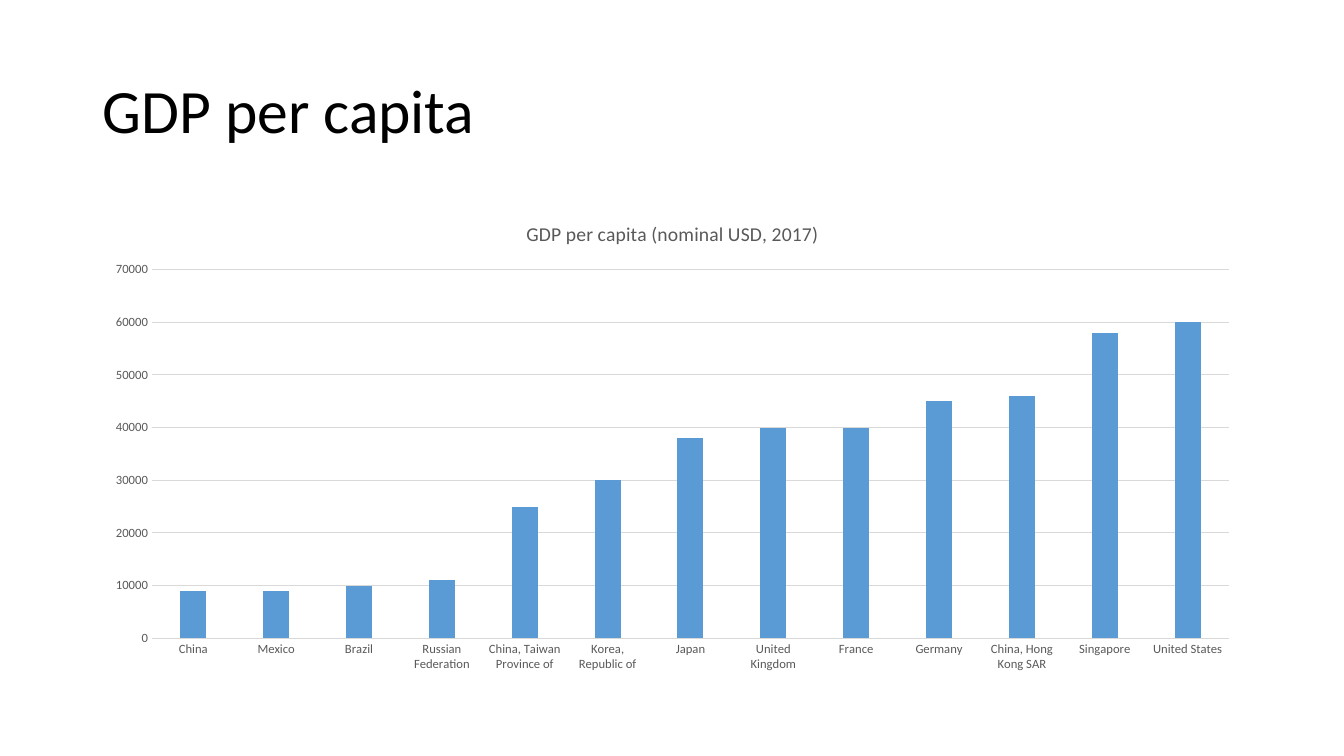
from pptx import Presentation
from pptx.chart.data import CategoryChartData
from pptx.dml.color import RGBColor
from pptx.enum.chart import XL_CHART_TYPE as ChartType, XL_TICK_MARK as TickMark
from pptx.enum.text import MSO_ANCHOR
from pptx.util import Inches, Pt

FONT = "Calibri"
BLACK = RGBColor(0x00, 0x00, 0x00)
GRAY = RGBColor(0x59, 0x59, 0x59)
LIGHT_GRAY = RGBColor(0xD9, 0xD9, 0xD9)
BLUE = RGBColor(0x5B, 0x9B, 0xD5)

GDP_PER_CAPITA = {
    "China": 9000,
    "Mexico": 9000,
    "Brazil": 10000,
    "Russian Federation": 11000,
    "China, Taiwan Province of": 25000,
    "Korea, Republic of": 30000,
    "Japan": 38000,
    "United Kingdom": 40000,
    "France": 40000,
    "Germany": 45000,
    "China, Hong Kong SAR": 46000,
    "Singapore": 58000,
    "United States": 60000,
}


def set_font(font, size, color):
    font.name = FONT
    font.size = Pt(size)
    font.bold = False
    font.color.rgb = color


prs = Presentation()
prs.slide_width = Inches(13.33)
prs.slide_height = Inches(7.5)
s = prs.slides.add_slide(prs.slide_layouts[6])

# Title
tf = s.shapes.add_textbox(Inches(0.92), Inches(0.4), Inches(11.5), Inches(1.45)).text_frame
tf.word_wrap = True
tf.vertical_anchor = MSO_ANCHOR.MIDDLE
tf.text = "GDP per capita"
p = tf.paragraphs[0]
p.line_spacing = 0.9
set_font(p.runs[0].font, 44, BLACK)

# Column chart
data = CategoryChartData()
data.categories = list(GDP_PER_CAPITA)
data.add_series("Series 1", list(GDP_PER_CAPITA.values()))
chart = s.shapes.add_chart(ChartType.COLUMN_CLUSTERED, Inches(0.92), Inches(2),
                           Inches(11.5), Inches(4.76), data).chart
set_font(chart.font, 10, BLACK)
chart.has_legend = False

chart.has_title = True
chart.chart_title.include_in_layout = False
tf = chart.chart_title.text_frame
tf.text = "GDP per capita (nominal USD, 2017)"
set_font(tf.paragraphs[0].runs[0].font, 14, GRAY)

plot = chart.plots[0]
plot.gap_width = 219
plot.overlap = -27
plot.vary_by_categories = False
fill = plot.series[0].format.fill
fill.solid()
fill.fore_color.rgb = BLUE

cat_axis, val_axis = chart.category_axis, chart.value_axis
for axis in (cat_axis, val_axis):
    axis.major_tick_mark = TickMark.NONE
    axis.minor_tick_mark = TickMark.NONE
    set_font(axis.tick_labels.font, 9, GRAY)

val_axis.minimum_scale = 0
val_axis.maximum_scale = 70000
val_axis.major_unit = 10000
val_axis.has_major_gridlines = True
val_axis.format.line.fill.background()
for line in (cat_axis.format.line, val_axis.major_gridlines.format.line):
    line.color.rgb = LIGHT_GRAY
    line.width = Pt(0.75)

prs.save("out.pptx")
